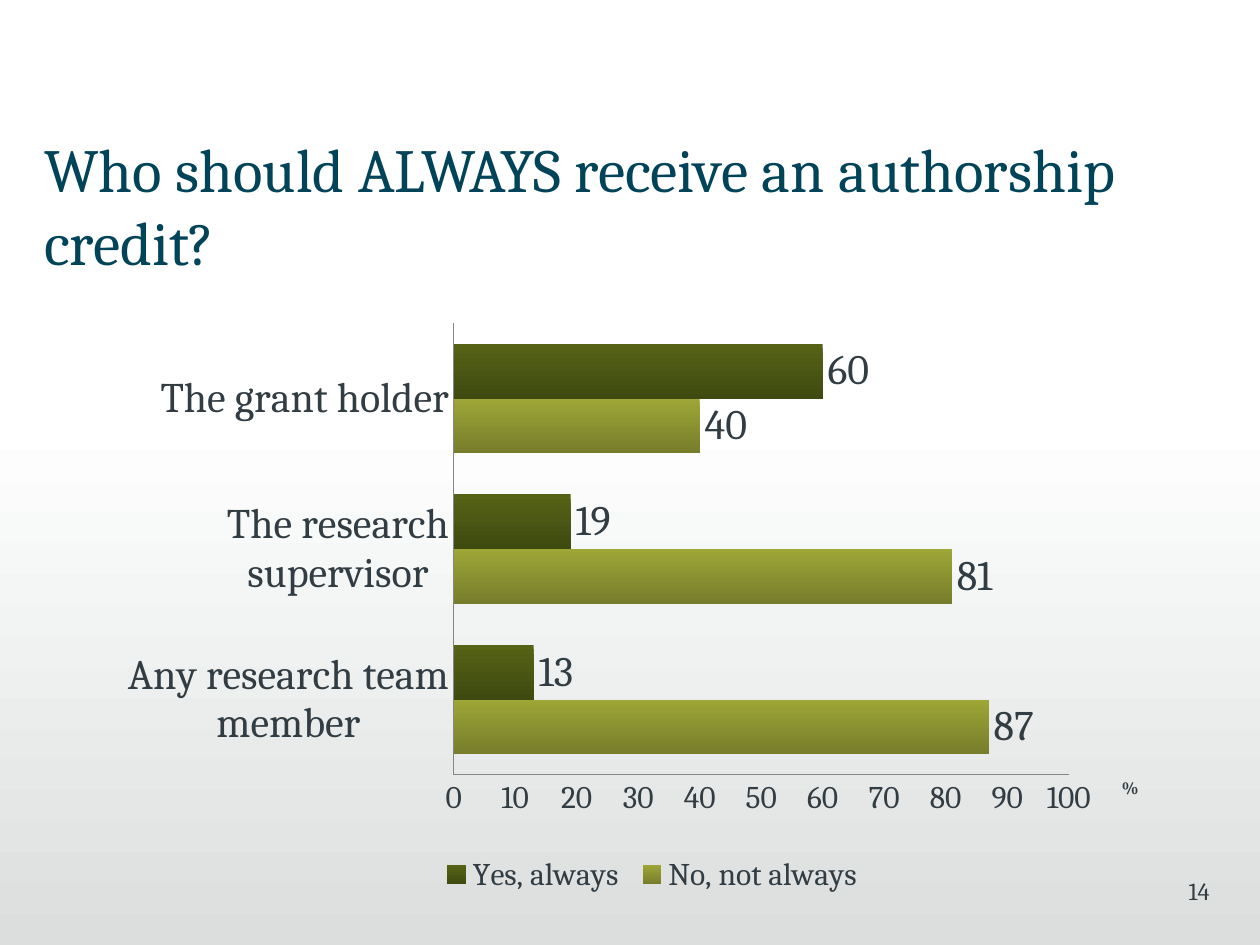
"""Build a slide with a bar chart on who should always receive authorship credit."""
from lxml import etree
from pptx import Presentation
from pptx.chart.data import CategoryChartData
from pptx.dml.color import RGBColor
from pptx.enum.chart import XL_CHART_TYPE as CT, XL_LABEL_POSITION as LP
from pptx.enum.chart import XL_LEGEND_POSITION as LEG, XL_TICK_MARK as TM
from pptx.enum.shapes import MSO_SHAPE as SH
from pptx.enum.text import PP_ALIGN as AL
from pptx.oxml.ns import qn
from pptx.util import Inches, Pt

INK = "323D43"


def style(font, size, color=INK, bold=False):
    font.name, font.size, font.bold = "Cambria", Pt(size), bold
    font.color.rgb = RGBColor.from_string(color)


def shade(fill, *colors):
    fill.gradient()
    fill.gradient_angle = 270
    for stop, color in zip(fill.gradient_stops, colors):
        stop.color.rgb = RGBColor.from_string(color)


prs = Presentation()
prs.slide_width, prs.slide_height = Inches(10), Inches(7.5)
W, H = prs.slide_width, prs.slide_height
s = prs.slides.add_slide(prs.slide_layouts[5])
title = s.shapes.title

sp = s.shapes.add_shape(SH.RECTANGLE, 0, int(H * 0.444), W, int(H * 0.556))
sp.shadow.inherit = False
sp.line.fill.background()
shade(sp.fill, "FFFFFF", "DCDEDE")

num = s.shapes.add_textbox(Inches(7.52), Inches(6.9), Inches(2.08), Inches(0.5))
title.left, title.top, title.width, title.height = map(Inches, (0.35, 0.99, 9.65, 0.71))
for box, text, size, color, align in (
    (num, "14", 14, INK, AL.RIGHT),
    (title, "Who should ALWAYS receive an authorship credit?", 35, "014359", AL.LEFT),
):
    tf = box.text_frame
    tf.text = text
    tf.word_wrap = True
    tf.vertical_anchor = 1
    p = tf.paragraphs[0]
    p.alignment = align
    style(p.runs[0].font, size, color)
num.text_frame.margin_right = title.text_frame.margin_left = 0

data = CategoryChartData()
data.categories = ["Any research team member", "The research supervisor", "The grant holder"]
data.add_series("No, not always", (87, 81, 40))
data.add_series("Yes, always", (13, 19, 60))
chart = s.shapes.add_chart(
    CT.BAR_CLUSTERED, Inches(0.35), Inches(1.31), Inches(9.37), Inches(6.19), data
).chart
chart.has_title = False
style(chart.font, 10)
chart.has_legend = True
chart.legend.position = LEG.BOTTOM
chart.legend.include_in_layout = False
style(chart.legend.font, 18)

plot = chart.plots[0]
plot.gap_width, plot.overlap, plot.vary_by_categories = 75, 0, False
for series, colors in zip(plot.series, (("9EA637", "777D2B"), ("566316", "3F4A10"))):
    shade(series.format.fill, *colors)
    labels = series.data_labels
    labels.show_value = True
    labels.position = LP.OUTSIDE_END
    style(labels.font, 24)

cat, val = chart.category_axis, chart.value_axis
for axis, size in ((cat, 24), (val, 18)):
    axis.major_tick_mark = axis.minor_tick_mark = TM.NONE
    axis.has_major_gridlines = False
    axis.format.line.color.rgb = RGBColor.from_string("868686")
    axis.format.line.width = Pt(0.75)
    style(axis.tick_labels.font, size)
val.minimum_scale, val.maximum_scale, val.major_unit = 0, 100, 10
val.axis_title.text_frame.text = "%"
style(val.axis_title.text_frame.paragraphs[0].runs[0].font, 10, bold=True)

area = chart.plots[0]._element.getparent()
for parent, after, inner, spots in (
    (area, None, True, (0.347, 0.203, 0.521, 0.579)),
    (val.axis_title._element, "c:tx", False, (0.91, 0.78)),
    (chart.legend._element, "c:legendPos", False, (0.33, 0.88, 0.37, 0.06)),
):
    for old in parent.findall(qn("c:layout")):
        parent.remove(old)
    layout = etree.Element(qn("c:layout"))
    manual = etree.SubElement(layout, qn("c:manualLayout"))
    if inner:
        etree.SubElement(manual, qn("c:layoutTarget")).set("val", "inner")
    for key in "xy":
        etree.SubElement(manual, qn(f"c:{key}Mode")).set("val", "edge")
    for key, share in zip("xywh", spots):
        etree.SubElement(manual, qn(f"c:{key}")).set("val", str(share))
    if after:
        parent.find(qn(after)).addnext(layout)
    else:
        parent.insert(0, layout)

s.shapes._spTree.remove(title._element)
s.shapes._spTree.insert(4, title._element)
prs.save("out.pptx")
